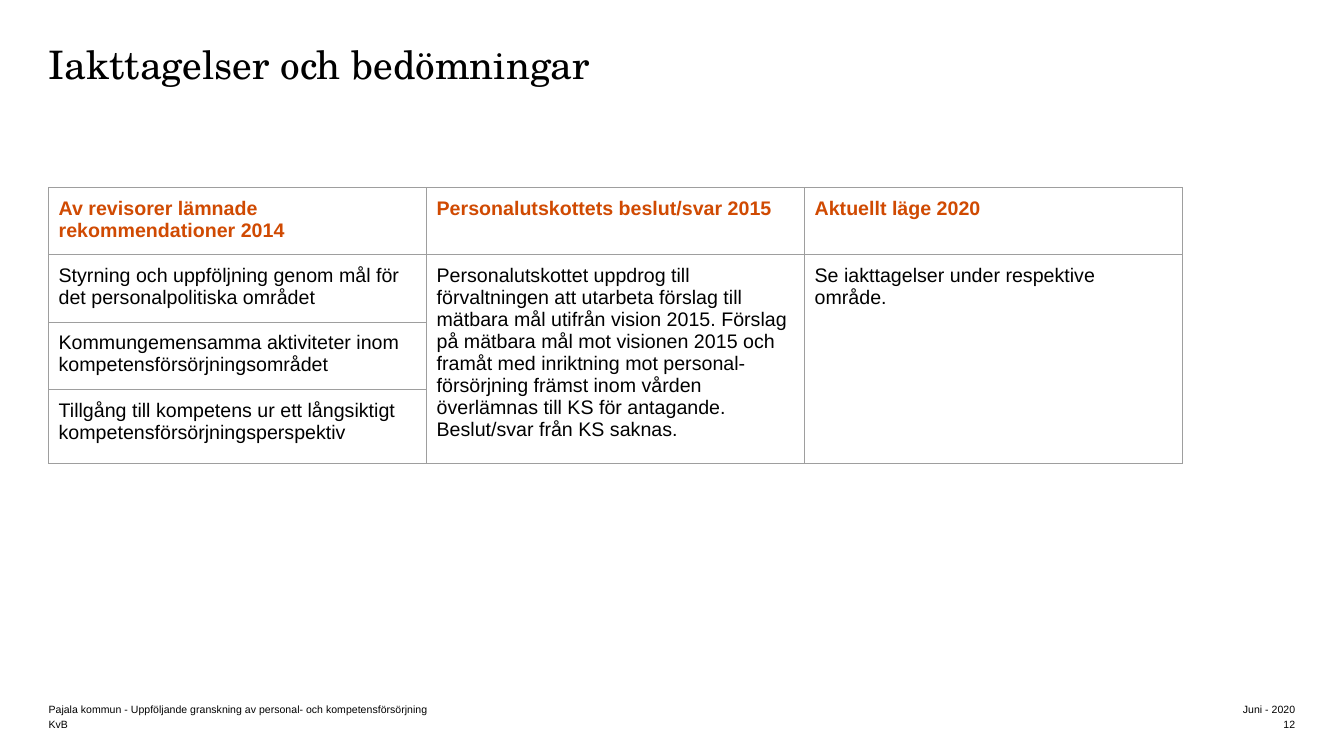
from lxml import etree
from pptx import Presentation
from pptx.dml.color import RGBColor
from pptx.enum.text import MSO_ANCHOR, PP_ALIGN
from pptx.oxml.ns import qn
from pptx.util import Pt

BLACK = RGBColor(0x00, 0x00, 0x00)
ORANGE = RGBColor(0xD0, 0x4A, 0x02)
GREY = RGBColor(0x9E, 0x9E, 0x9E)
LEFT, RIGHT = PP_ALIGN.LEFT, PP_ALIGN.RIGHT
TOP, BOTTOM = MSO_ANCHOR.TOP, MSO_ANCHOR.BOTTOM
SANS, SERIF = "Arial", "TeX Gyre Schola"


def write(frame, text, size=14, font=SANS, color=BLACK, bold=False,
          align=LEFT, space=None):
    """Fill a text frame, one paragraph per line of text."""
    frame.word_wrap = True
    frame.text = text
    for para in frame.paragraphs:
        para.alignment = align
        if space:
            para.line_spacing = space
        face = para.runs[0].font
        face.size, face.name, face.bold = Pt(size), font, bold
        face.color.rgb = color


class Page:
    def __init__(self, deck, edge=GREY, width=0.75, inset=7.2):
        self.slide = deck.slides.add_slide(deck.slide_layouts[6])
        self.edge, self.width, self.inset = edge, width, inset

    def text(self, box, text, anchor=TOP, **style):
        frame = self.slide.shapes.add_textbox(*map(Pt, box)).text_frame
        frame.margin_left = frame.margin_right = 0
        frame.margin_top = frame.margin_bottom = 0
        frame.vertical_anchor = anchor
        write(frame, text, **style)

    def border(self, cell):
        props = cell._tc.get_or_add_tcPr()
        for spot, side in enumerate(("lnL", "lnR", "lnT", "lnB")):
            line = etree.Element(qn(f"a:{side}"), w=str(Pt(self.width)))
            fill = etree.SubElement(line, qn("a:solidFill"))
            etree.SubElement(fill, qn("a:srgbClr"), val=str(self.edge))
            props.insert(spot, line)

    def table(self, left, top, cols, rows, data):
        """Draw a bordered table; None joins a cell to the one above."""
        frame = self.slide.shapes.add_table(
            len(rows), len(cols), Pt(left), Pt(top),
            Pt(sum(cols)), Pt(sum(rows)))
        grid = frame.table
        grid.first_row = grid.horz_banding = False
        for col, width in zip(grid.columns, cols):
            col.width = Pt(width)
        for row, height in zip(grid.rows, rows):
            row.height = Pt(height)
        for r, line in enumerate(data):
            for c, text in enumerate(line):
                cell = grid.cell(r, c)
                cell.margin_left = cell.margin_right = Pt(self.inset)
                cell.margin_top = cell.margin_bottom = Pt(self.inset)
                cell.fill.background()
                self.border(cell)
                if text:
                    head = r == 0
                    write(cell.text_frame, text, bold=head,
                          color=ORANGE if head else BLACK)
        for c in range(len(cols)):
            for r in range(len(rows)):
                end = r
                while end + 1 < len(rows) and data[end + 1][c] is None:
                    end += 1
                if data[r][c] and end > r:
                    grid.cell(r, c).merge(grid.cell(end, c))


DATA = [
    ["Av revisorer lämnade rekommendationer 2014",
     "Personalutskottets beslut/svar 2015",
     "Aktuellt läge 2020"],
    ["Styrning och uppföljning genom mål för det personalpolitiska området",
     "Personalutskottet uppdrog till förvaltningen att utarbeta förslag till "
     "mätbara mål utifrån vision 2015. Förslag på mätbara mål mot visionen "
     "2015 och framåt med inriktning mot personal-\n"
     "försörjning främst inom vården överlämnas till KS för antagande. "
     "Beslut/svar från KS saknas.",
     "Se iakttagelser under respektive område."],
    ["Kommungemensamma aktiviteter inom kompetensförsörjningsområdet",
     None, None],
    ["Tillgång till kompetens ur ett långsiktigt "
     "kompetensförsörjningsperspektiv", None, None],
]

FOOT = [
    (500.4, "Pajala kommun - Uppföljande granskning av personal- och "
     "kompetensförsörjning", "Juni - 2020"),
    (511.2, "KvB", "12"),
]


def main():
    deck = Presentation()
    deck.slide_width, deck.slide_height = Pt(960), Pt(540)
    page = Page(deck)

    # Title
    page.text((34.7, 33.8, 890, 109.4), "Iakttagelser och bedömningar",
              size=28, font=SERIF, space=0.85)

    # Recommendations and answers
    page.table(34.7, 133.9, [270] * 3, [45.8] * 3 + [48.8], DATA)

    # Footer
    for top, left, right in FOOT:
        page.text((34.7, top, 431.3, 10.8), left, BOTTOM, size=7.5)
        page.text((647.3, top, 277.9, 10.8), right, BOTTOM,
                  size=7.5, align=RIGHT)

    deck.save("out.pptx")


if __name__ == "__main__":
    main()
